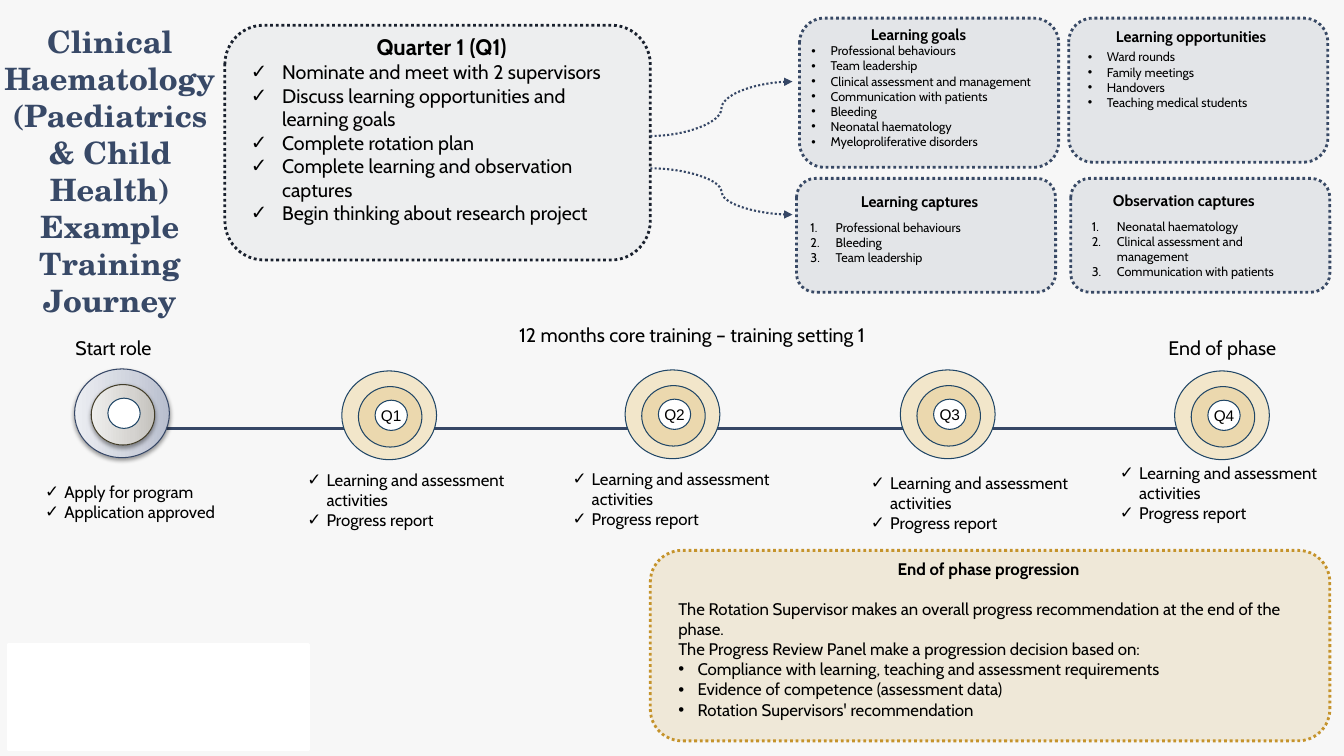
from copy import deepcopy
from pptx import Presentation
from pptx.dml.color import RGBColor as Rgb
from pptx.enum.dml import MSO_LINE as Dash
from pptx.enum.shapes import MSO_CONNECTOR as Link, MSO_SHAPE as Shape
from pptx.enum.text import MSO_ANCHOR as Anchor, MSO_AUTO_SIZE as Fit, PP_ALIGN as Align
from pptx.oxml.ns import qn
from pptx.oxml.xmlchemy import OxmlElement as Node
from pptx.util import Inches, Pt

COLORS = {
    "page": "F7F7F7", "text": "000000", "white": "FFFFFF", "title": "384967",
    "navy": "364766", "panel": "384965", "quarter": "19202D", "ring": "204666",
    "sand": "F2E6CA", "gold": "D3A440", "phase": "C5932B", "start_line": "423D29",
}
BLUE_FADE = ((0, "B8BECE"), (0.35, "CDD1DC"), (1, "ECEEF2"))
GREY_FADE = ((0, "C3C1BC"), (0.35, "D5D3D0"), (1, "EFEFED"))
RINGS = ((0, 0, 0.88, 0.94), (0.15, 0.17, 0.6, 0.63), (0.31, 0.31, 0.3, 0.32))


def add_node(parent, tag, **values):
    child = Node(tag)
    for name, value in values.items():
        child.set(name, str(value))
    parent.append(child)
    return child


class JourneySlide:
    body_font = "Cabin"

    def __init__(self, deck):
        self.page = deck.slides.add_slide(deck.slide_layouts[6])
        fill = self.page.background.fill
        fill.solid()
        fill.fore_color.rgb = self.color("page")

    def color(self, name):
        return Rgb.from_string(COLORS[name])

    def outline(self, item, color, width, dotted=False):
        item.line.color.rgb = self.color(color)
        item.line.width = Pt(width)
        if dotted:
            item.line.dash_style = Dash.ROUND_DOT

    def shape(self, kind, place, fill, line, width, alpha=100, dotted=False):
        item = self.page.shapes.add_shape(kind, *map(Inches, place))
        item.shadow.inherit = False
        item.fill.solid()
        item.fill.fore_color.rgb = self.color(fill)
        self.outline(item, line, width, dotted)
        if alpha < 100:
            tint = item.element.spPr.find(qn("a:solidFill"))[0]
            add_node(tint, "a:alpha", val=alpha * 1000)
        return item

    def panel(self, place, color, alpha, line=None):
        self.shape(Shape.ROUNDED_RECTANGLE, place, color, line or color, 2, alpha, True)

    def fade(self, item, colors):
        item.fill.gradient()
        item.fill.gradient_angle = 90
        stops = item.element.spPr.find(qn("a:gradFill")).find(qn("a:gsLst"))
        stops.append(deepcopy(stops[0]))
        for stop, (position, value) in zip(item.fill.gradient_stops, colors):
            stop.position = position
            stop.color.rgb = Rgb.from_string(value)
        effects = item.element.spPr.find(qn("a:effectLst"))
        shade = add_node(effects, "a:outerShdw", blurRad=Pt(3.1), dist=Pt(1.6),
                         dir=5400000, rotWithShape=0)
        add_node(add_node(shade, "a:srgbClr", val=COLORS["text"]), "a:alpha", val=38000)

    def target(self, left, top, styles):
        rings = []
        for (across, down, width, height), style in zip(RINGS, styles):
            place = (left + across, top + down, width, height)
            ring = self.shape(Shape.OVAL, place, *style)
            ring.rotation = 270
            rings.append(ring)
        return rings

    def connector(self, kind, start, end, width, arrow=False):
        item = self.page.shapes.add_connector(kind, *map(Inches, start + end))
        self.outline(item, "navy", width, arrow)
        if arrow:
            add_node(item.line._get_or_add_ln(), "a:tailEnd", type="triangle")
        add_node(item.element.spPr, "a:effectLst")

    def bullet(self, para, mark, indent):
        props = para._p.get_or_add_pPr()
        props.set("marL", str(Inches(indent)))
        props.set("indent", str(-Inches(indent)))
        if mark == "1.":
            add_node(props, "a:buAutoNum", type="arabicPeriod")
        else:
            add_node(props, "a:buFont", typeface="Arial")
            add_node(props, "a:buChar", char=mark)

    def paragraph(self, frame, text, size, mark=None, indent=0.19, bold=False,
                  color="text", font=None, **layout):
        para = frame.paragraphs[0] if not frame.text else frame.add_paragraph()
        if mark:
            self.bullet(para, mark, indent)
        for name, value in layout.items():
            setattr(para, name, value)
        span = para.add_run()
        span.text = text
        look = {"name": font or self.body_font, "size": Pt(size), "bold": bold}
        for name, value in look.items():
            setattr(span.font, name, value)
        span.font.color.rgb = self.color(color)

    def text(self, place, lines=(), size=12, wrap=True, **style):
        box = self.page.shapes.add_textbox(*map(Inches, place))
        frame = box.text_frame
        frame.word_wrap = wrap
        frame.auto_size = Fit.SHAPE_TO_FIT_TEXT
        for line in lines:
            self.paragraph(frame, line, size, **style)
        return frame

    def title(self, place, lines):
        frame = self.text(place, lines, 22, bold=True, color="title",
                          font="TeX Gyre Schola", alignment=Align.CENTER)
        layout = {"auto_size": Fit.NONE, "vertical_anchor": Anchor.MIDDLE,
                  "margin_left": Inches(0.07), "margin_right": Inches(0.07),
                  "margin_top": Inches(0.04), "margin_bottom": Inches(0.04)}
        for name, value in layout.items():
            setattr(frame, name, value)


def draw_timeline(slide):
    slide.connector(Link.STRAIGHT, (0.9, 4.25), (12.34, 4.25), 2.25)
    center = ("white", "ring", 0.75)
    start = slide.target(0.77, 3.63, (("white", "navy", 0.75),
                                      ("white", "start_line", 0.75), center))
    for ring, colors in zip(start, (BLUE_FADE, GREY_FADE)):
        slide.fade(ring, colors)
    quarter_rings = (("sand", "ring", 0.75), ("gold", "ring", 0.75, 20), center)
    quarters = (
        (3.42, 3.65, (2.95, 4.61, 2.19, 0.71)),
        (6.23, 3.64, (5.58, 4.6, 2.62, 0.71)),
        (8.96, 3.64, (8.54, 4.64, 2.19, 0.71)),
        (11.68, 3.65, (11.01, 4.54, 2.32, 0.71)),
    )
    tasks = ("Learning and assessment activities", "Progress report")
    for number, (left, top, place) in enumerate(quarters, 1):
        slide.target(left, top, quarter_rings)
        slide.text((left + 0.26, top + 0.33, 0.83, 0.29), [f"Q{number}"], 11, font="Arial")
        slide.text(place, tasks, mark="✓")
    slide.text((0.35, 4.73, 2.16, 0.5), ("Apply for program", "Application approved"), mark="✓")
    for place, label in (
        ((0.65, 3.28, 0.97, 0.34), "Start role"),
        ((11.49, 3.28, 1.35, 0.34), "End of phase"),
        ((5.05, 3.15, 3.76, 0.34), "12 months core training – training setting 1"),
    ):
        slide.text(place, [label], 14, wrap=False)


def draw_quarter(slide):
    slide.panel((2.23, 0.25, 4.22, 2.33), "panel", 5, "quarter")
    frame = slide.text((2.39, 0.28, 3.98, 2.22), ["Quarter 1 (Q1)"], 16,
                       bold=True, alignment=Align.CENTER)
    for line in ("Nominate and meet with 2 supervisors",
                 "Discuss learning opportunities and learning goals",
                 "Complete rotation plan",
                 "Complete learning and observation captures",
                 "Begin thinking about research project"):
        slide.paragraph(frame, line, 14, "✓", 0.31)
    for start, end in (((6.45, 1.35), (7.86, 0.81)), ((6.45, 1.67), (7.86, 2.13))):
        slide.connector(Link.CURVE, start, end, 1.5, True)


def draw_learning(slide):
    cards = (
        ((7.93, 0.18, 2.57, 1.48), "Learning goals", (8.54, 0.2, 1.22, 0.29),
         (7.95, 0.38, 2.68, 1.16), "•", 0.19,
         ("Professional behaviours", "Team leadership", "Clinical assessment and management",
          "Communication with patients", "Bleeding", "Neonatal haematology",
          "Myeloproliferative disorders")),
        ((10.6, 0.18, 2.57, 1.43), "Learning opportunities", (10.97, 0.22, 1.83, 0.29),
         (10.69, 0.44, 2.28, 0.71), "•", 0.19,
         ("Ward rounds", "Family meetings", "Handovers", "Teaching medical students")),
        ((7.9, 1.77, 2.57, 1.13), "Learning captures", (8.44, 1.86, 1.49, 0.29),
         (7.94, 2.13, 2.28, 0.56), "1.", 0.25,
         ("Professional behaviours", "Bleeding", "Team leadership")),
        ((10.62, 1.77, 2.57, 1.13), "Observation captures", (10.94, 1.85, 1.74, 0.29),
         (10.73, 2.12, 2.28, 0.71), "1.", 0.25,
         ("Neonatal haematology", "Clinical assessment and management",
          "Communication with patients")),
    )
    for card, heading, heading_place, list_place, mark, indent, lines in cards:
        slide.panel(card, "panel", 10)
        slide.text(heading_place, [heading], 11, wrap=False, bold=True)
        slide.text(list_place, lines, 9, mark=mark, indent=indent)


def draw_progression(slide):
    slide.panel((6.45, 5.46, 6.74, 1.89), "phase", 15)
    frame = slide.text((6.63, 5.49, 6.35, 1.72), ["End of phase progression"],
                       bold=True, alignment=Align.CENTER)
    slide.paragraph(frame, "The Rotation Supervisor makes an overall progress recommendation "
                    "at the end of the phase.", 12, space_before=Pt(14.3))
    slide.paragraph(frame, "The Progress Review Panel make a progression decision based on:", 12)
    for line in ("Compliance with learning, teaching and assessment requirements",
                 "Evidence of competence (assessment data)",
                 "Rotation Supervisors' recommendation"):
        slide.paragraph(frame, line, 12, "•")


def main():
    deck = Presentation()
    deck.slide_width, deck.slide_height = Inches(13.33), Inches(7.5)
    slide = JourneySlide(deck)
    draw_timeline(slide)
    draw_learning(slide)
    draw_quarter(slide)
    draw_progression(slide)
    slide.title((-0.04, 1.05, 2.26, 1.28),
                ("Clinical Haematology (Paediatrics & Child Health)", "Example", "Training Journey"))
    slide.shape(Shape.RECTANGLE, (0.08, 6.39, 2.98, 1.05), "white", "white", 2)
    deck.save("out.pptx")


if __name__ == "__main__":
    main()
